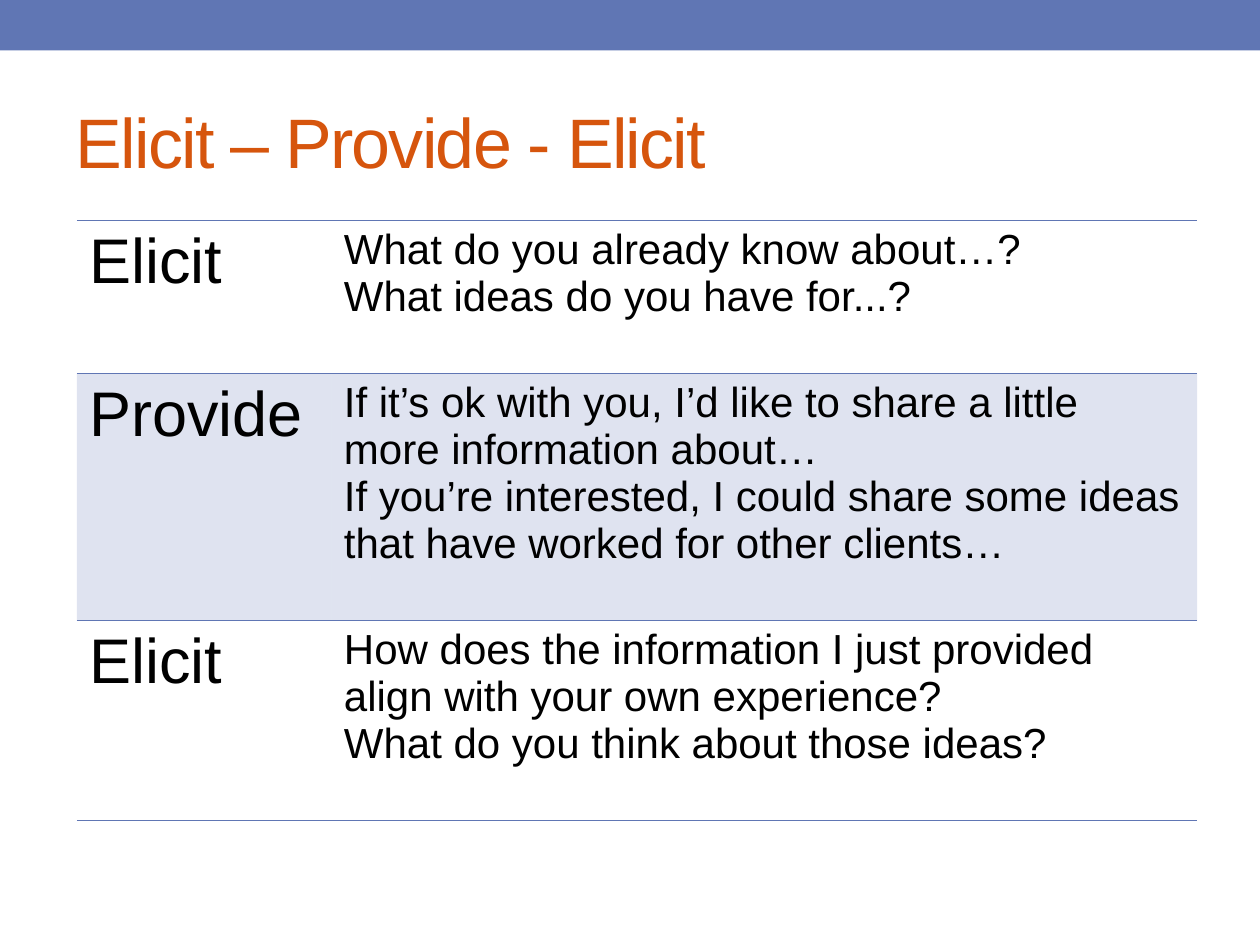
import dataclasses

import pptx
import pptx.dml.color
import pptx.enum.shapes
import pptx.enum.text
import pptx.oxml
import pptx.oxml.ns
import pptx.util
from pptx.util import Cm


@dataclasses.dataclass(frozen=True)
class Theme:
    """Colours, font and type sizes of the slide."""
    font: str = "Arial"
    blue: str = "6076B4"
    orange: str = "D6550D"
    black: str = "000000"
    title_size: int = 40
    step_size: int = 36
    prompt_size: int = 24
    band_opacity: int = 20


THEME = Theme()
STEPS = [
    ("Elicit", ["What do you already know about…?",
                "What ideas do you have for...?"], 3.09),
    ("Provide", ["If it’s ok with you, I’d like to share a little more information about…",
                 "If you’re interested, I could share some ideas that have worked for other clients…"], 4.98),
    ("Elicit", ["How does the information I just provided align with your own experience?",
                "What do you think about those ideas?"], 4.03),
]
COLUMN_WIDTHS = (5.13, 17.45)


def rgb(value):
    """Return a colour from its hex value."""
    return pptx.dml.color.RGBColor.from_string(value)


def style_paragraph(paragraph, size, color):
    """Set the font of a left-aligned paragraph."""
    paragraph.alignment = pptx.enum.text.PP_ALIGN.LEFT
    font = paragraph.font
    font.name = THEME.font
    font.size = pptx.util.Pt(size)
    font.color.rgb = rgb(color)


def add_top_bar(slide, width):
    """Add the coloured bar along the top edge."""
    shape = slide.shapes.add_shape(
        pptx.enum.shapes.MSO_SHAPE.RECTANGLE, 0, 0, width, Cm(1.02))
    shape.shadow.inherit = False
    shape.fill.solid()
    shape.fill.fore_color.rgb = rgb(THEME.blue)
    shape.line.fill.background()


def set_title(slide, text):
    """Place and format the title."""
    title = slide.shapes.title
    title.left, title.top = Cm(1.27), Cm(1.47)
    title.width, title.height = Cm(22.86), Cm(2.74)
    frame = title.text_frame
    frame.text = text
    frame.vertical_anchor = pptx.enum.text.MSO_ANCHOR.MIDDLE
    paragraph = frame.paragraphs[0]
    style_paragraph(paragraph, THEME.title_size, THEME.orange)
    paragraph.runs[0].font._element.set("spc", "-100")


def fill_cell(cell, banded):
    """Give a cell a translucent band or no fill."""
    if not banded:
        cell.fill.background()
        return
    cell.fill.solid()
    cell.fill.fore_color.rgb = rgb(THEME.blue)
    color = cell._tc.tcPr.find(".//" + pptx.oxml.ns.qn("a:srgbClr"))
    color.append(pptx.oxml.parse_xml(
        f'<a:alpha {pptx.oxml.ns.nsdecls("a")} val="{THEME.band_opacity * 1000}"/>'))


def rule_cell(cell):
    """Draw horizontal rules above and below a cell and none at its sides."""
    rule = f'<a:solidFill><a:srgbClr val="{THEME.blue}"/></a:solidFill>'
    borders = {"lnL": "<a:noFill/>", "lnR": "<a:noFill/>", "lnT": rule, "lnB": rule}
    for index, (tag, paint) in enumerate(borders.items()):
        cell._tc.tcPr.insert(index, pptx.oxml.parse_xml(
            f'<a:{tag} {pptx.oxml.ns.nsdecls("a")} w="12700">{paint}</a:{tag}>'))


def write_cell(cell, lines, size, banded):
    """Write the lines of a cell and format it."""
    cell.text = "\n".join(lines)
    for paragraph in cell.text_frame.paragraphs:
        style_paragraph(paragraph, size, THEME.black)
    fill_cell(cell, banded)
    rule_cell(cell)


def add_steps_table(slide):
    """Add the table of steps and their prompts."""
    height = sum(step[2] for step in STEPS)
    table = slide.shapes.add_table(
        len(STEPS), len(COLUMN_WIDTHS), Cm(1.55), Cm(4.44),
        Cm(sum(COLUMN_WIDTHS)), Cm(height)).table
    table.first_row = table.horz_banding = False
    for column, width in zip(table.columns, COLUMN_WIDTHS):
        column.width = Cm(width)
    for index, (step, prompts, row_height) in enumerate(STEPS):
        table.rows[index].height = Cm(row_height)
        banded = index % 2 == 1
        write_cell(table.cell(index, 0), [step], THEME.step_size, banded)
        write_cell(table.cell(index, 1), prompts, THEME.prompt_size, banded)


def main():
    """Build and save the slide."""
    presentation = pptx.Presentation()
    presentation.slide_width, presentation.slide_height = Cm(25.4), Cm(19.05)
    slide = presentation.slides.add_slide(presentation.slide_layouts[5])
    add_top_bar(slide, presentation.slide_width)
    set_title(slide, "Elicit – Provide - Elicit")
    add_steps_table(slide)
    presentation.save("out.pptx")


if __name__ == "__main__":
    main()
